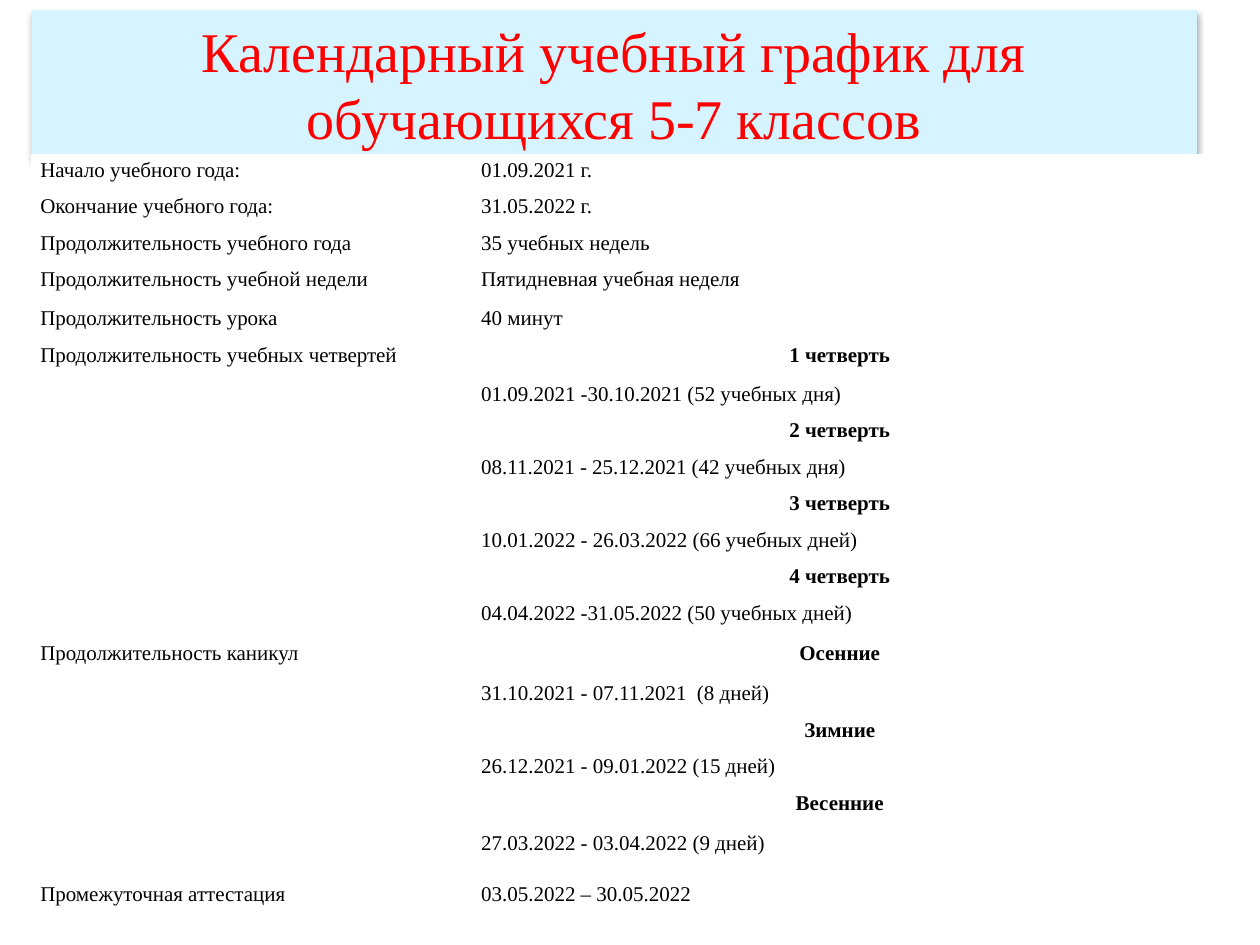
from dataclasses import dataclass

from lxml.etree import SubElement
from pptx import Presentation
from pptx.dml.color import RGBColor
from pptx.enum.text import MSO_ANCHOR, MSO_AUTO_SIZE, PP_ALIGN
from pptx.oxml import parse_xml
from pptx.oxml.ns import nsdecls, qn
from pptx.util import Inches, Pt


@dataclass(frozen=True)
class Theme:
    """Colours, font and type sizes of the deck."""
    font: str = "Times New Roman"
    title_size: Pt = Pt(32)
    body_size: Pt = Pt(12)
    title_color: RGBColor = RGBColor(0xFF, 0x00, 0x00)
    title_fill: RGBColor = RGBColor(0xD5, 0xF4, 0xFF)
    text_color: RGBColor = RGBColor(0x00, 0x00, 0x00)
    cell_fill: RGBColor = RGBColor(0xFF, 0xFF, 0xFF)


@dataclass(frozen=True)
class Box:
    """Region of a slide."""
    left: int
    top: int
    width: int
    height: int


THEME = Theme()
TITLE = "Календарный учебный график для обучающихся 5-7 классов"
FACTS = [
    ("Начало учебного года:", "01.09.2021 г."),
    ("Окончание учебного года:", "31.05.2022 г."),
    ("Продолжительность учебного года", "35 учебных недель"),
    ("Продолжительность учебной недели", "Пятидневная учебная неделя"),
    ("Продолжительность урока", "40 минут"),
]
QUARTERS = [
    ("1 четверть", "01.09.2021 -30.10.2021 (52 учебных дня)"),
    ("2 четверть", "08.11.2021 - 25.12.2021 (42 учебных дня)"),
    ("3 четверть", "10.01.2022 - 26.03.2022 (66 учебных дней)"),
    ("4 четверть", "04.04.2022 -31.05.2022 (50 учебных дней)"),
]
HOLIDAYS = [
    ("Осенние", "31.10.2021 - 07.11.2021  (8 дней)"),
    ("Зимние", "26.12.2021 - 09.01.2022 (15 дней)"),
    ("Весенние", "27.03.2022 - 03.04.2022 (9 дней)"),
]
GROUPS = [
    ("Продолжительность учебных четвертей", QUARTERS),
    ("Продолжительность каникул", HOLIDAYS),
]
ATTESTATION = ("Промежуточная аттестация", "03.05.2022 – 30.05.2022")
COLUMN_WIDTHS = [3.13, 0.37, 5.83]
ROW_HEIGHT = 0.29
TALL_ROWS = {3: 0.31, 5: 0.31, 12: 0.32, 13: 0.32, 17: 0.32, 18: 0.4}


def style_span(span, size, color, bold=False):
    """Apply the deck font with a size, colour and weight."""
    span.font.name = THEME.font
    span.font.size = size
    span.font.color.rgb = color
    span.font.bold = bold


def add_title(page, box):
    """Turn the title placeholder into a rounded banner with a soft shadow."""
    title = page.shapes.title
    title.left, title.top = box.left, box.top
    title.width, title.height = box.width, box.height
    properties = title.element.spPr
    properties.append(parse_xml(
        f'<a:prstGeom {nsdecls("a")} prst="roundRect"><a:avLst/></a:prstGeom>'))
    title.fill.solid()
    title.fill.fore_color.rgb = THEME.title_fill
    title.line.fill.background()
    properties.append(parse_xml(
        f'<a:effectLst {nsdecls("a")}>'
        f'<a:outerShdw blurRad="{Pt(3.5)}" dist="{Pt(2.2)}" dir="5400000" rotWithShape="0">'
        '<a:srgbClr val="000000"><a:alpha val="32000"/></a:srgbClr>'
        '</a:outerShdw></a:effectLst>'))
    frame = title.text_frame
    frame.text = TITLE
    frame.word_wrap = True
    frame.auto_size = MSO_AUTO_SIZE.NONE
    frame.vertical_anchor = MSO_ANCHOR.MIDDLE
    para = frame.paragraphs[0]
    para.alignment = PP_ALIGN.CENTER
    style_span(para.runs[0], THEME.title_size, THEME.title_color)


def fill_cell(cell, text="", alignment=PP_ALIGN.JUSTIFY, bold=False):
    """Write a cell, keeping empty ones at body size so rows stay low."""
    cell.fill.solid()
    cell.fill.fore_color.rgb = THEME.cell_fill
    cell.margin_left = cell.margin_right = Inches(0.07)
    cell.margin_top = cell.margin_bottom = 0
    para = cell.text_frame.paragraphs[0]
    para.alignment = alignment
    para.line_spacing = 1.15
    if text:
        para.text = text
        style_span(para.runs[0], THEME.body_size, THEME.text_color, bold)
    else:
        ending = SubElement(para._p, qn("a:endParaRPr"))
        ending.set("sz", str(int(THEME.body_size.pt * 100)))


def schedule_rows():
    """List label, value and heading flag for every row, and the label spans."""
    rows = [(label, value, False) for label, value in FACTS]
    spans = []
    for label, periods in GROUPS:
        first = len(rows)
        for heading, dates in periods:
            rows += [("", heading, True), ("", dates, False)]
        rows[first] = (label, *rows[first][1:])
        spans.append((first, len(rows) - 1))
    rows.append((*ATTESTATION, False))
    return rows, spans


def add_schedule(page, box):
    """Place the schedule table in the box."""
    rows, spans = schedule_rows()
    table = page.shapes.add_table(
        len(rows), len(COLUMN_WIDTHS), box.left, box.top, box.width, box.height).table
    table.first_row = table.horz_banding = False
    for column, width in zip(table.columns, COLUMN_WIDTHS):
        column.width = Inches(width)
    for index, (label, value, heading) in enumerate(rows):
        table.rows[index].height = Inches(TALL_ROWS.get(index, ROW_HEIGHT))
        label_alignment = PP_ALIGN.LEFT if label == GROUPS[0][0] else PP_ALIGN.JUSTIFY
        value_alignment = PP_ALIGN.CENTER if heading else PP_ALIGN.JUSTIFY
        fill_cell(table.cell(index, 0), label, label_alignment)
        fill_cell(table.cell(index, 1))
        fill_cell(table.cell(index, 2), value, value_alignment, heading)
    for first, last in spans:
        table.cell(first, 0).merge(table.cell(last, 0))


def main():
    """Build the deck and save it."""
    deck = Presentation()
    deck.slide_width, deck.slide_height = Inches(10), Inches(7.5)
    page = deck.slides.add_slide(deck.slide_layouts[5])
    add_title(page, Box(Inches(0.25), Inches(0.08), Inches(9.25), Inches(1.17)))
    add_schedule(page, Box(Inches(0.25), Inches(1.23), Inches(9.33), Inches(6.05)))
    deck.save("out.pptx")


if __name__ == "__main__":
    main()
